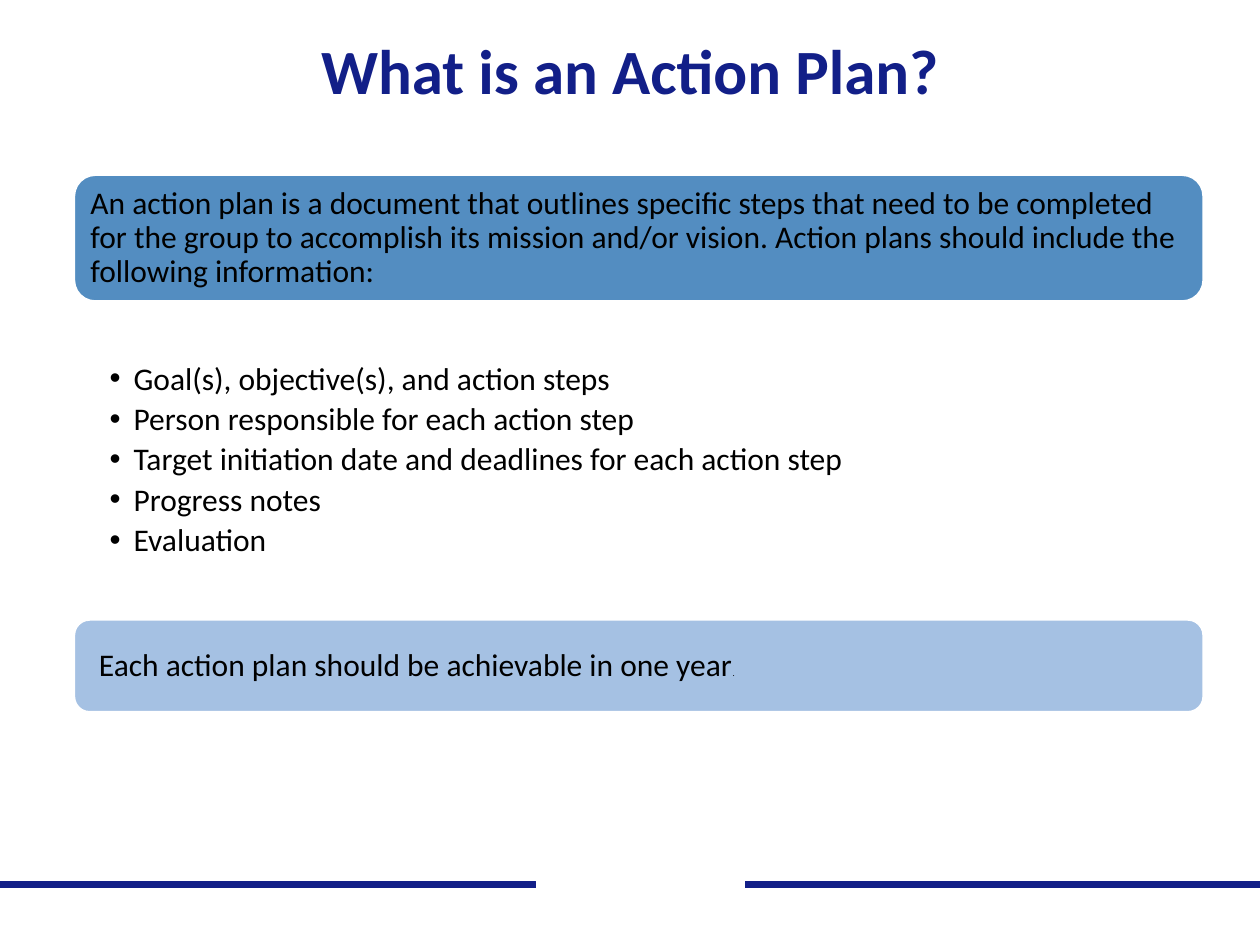
"""Build the slide that explains what an action plan is."""
from pptx import Presentation
from pptx.dml.color import RGBColor
from pptx.enum.shapes import MSO_CONNECTOR as Link, MSO_SHAPE as Shape
from pptx.enum.text import MSO_ANCHOR as Anchor, MSO_AUTO_SIZE as Fit, PP_ALIGN as Align
from pptx.oxml.ns import qn
from pptx.util import Inches, Pt


def paint(form, hue):
    form.solid()
    form.fore_color.rgb = RGBColor.from_string(hue)


def style(para, size, hue="000000", bold=False, align=Align.LEFT):
    para.alignment = align
    para.line_spacing = 0.9
    para.space_before = Pt(0)
    para.font.name = "Calibri"
    para.font.size = Pt(size)
    para.font.bold = bold
    paint(para.font.fill, hue)


NAVY, WHITE = "121F88", "FFFFFF"
LEFT, WIDTH = Inches(0.59), Inches(8.96)

deck = Presentation()
deck.slide_width, deck.slide_height = Inches(10), Inches(7.5)
slide = deck.slides.add_slide(deck.slide_layouts[1])
title, body = slide.placeholders

for start, end, hue in ((0, 10, NAVY), (4.25, 5.91, WHITE)):
    rule = slide.shapes.add_connector(
        Link.STRAIGHT, Inches(start), Inches(7.02), Inches(end), Inches(7.02))
    rule.line.width = Pt(4.5)
    paint(rule.line.fill, hue)
    props = rule._element.spPr
    props.append(props.makeelement(qn("a:effectLst"), {}))

title.left, title.top = Inches(1.35), Inches(0.32)
title.width, title.height = Inches(7.3), Inches(0.53)
frame = title.text_frame
frame.text = "What is an Action Plan?"
frame.auto_size = Fit.NONE
frame.vertical_anchor = Anchor.MIDDLE
style(frame.paragraphs[0], 36, NAVY, True, Align.CENTER)

intro = ("An action plan is a document that outlines specific steps that need to be "
         "completed for the group to accomplish its mission and/or vision. Action plans "
         "should include the following information:")
note = "Each action plan should be achievable in one year"
panels = (
    (1.39, 1, "538DC1", 0.08, 0.07, ((intro, 18),)),
    (4.92, 0.73, "A5C1E3", 0.16, 0.02, ((note, 18), (".", 5))),
)
for top, height, hue, indent, inset, parts in panels:
    panel = slide.shapes.add_shape(
        Shape.ROUNDED_RECTANGLE, LEFT, Inches(top), WIDTH, Inches(height))
    panel.shadow.inherit = False
    paint(panel.fill, hue)
    panel.line.width = Pt(1)
    paint(panel.line.fill, WHITE)
    frame = panel.text_frame
    frame.word_wrap = True
    frame.vertical_anchor = Anchor.MIDDLE
    frame.margin_left = Inches(indent)
    frame.margin_right = frame.margin_top = frame.margin_bottom = Inches(inset)
    para = frame.paragraphs[0]
    style(para, 18)
    for text, size in parts:
        run = para.add_run()
        run.text = text
        run.font.size = Pt(size)

items = (
    "Goal(s), objective(s), and action steps",
    "Person responsible for each action step",
    "Target initiation date and deadlines for each action step",
    "Progress notes",
    "Evaluation",
)
body.left, body.top, body.width, body.height = LEFT, Inches(2.85), WIDTH, Inches(1.7)
frame = body.text_frame
frame.text = "\n".join(items)
frame.auto_size = Fit.NONE
frame.margin_left, frame.margin_right = Inches(0.28), Inches(0.14)
frame.margin_top = frame.margin_bottom = Inches(0.03)
for para in frame.paragraphs:
    props = para._p.get_or_add_pPr()
    props.set("marL", str(Inches(0.19)))
    props.set("indent", str(-Inches(0.19)))
    style(para, 18)
    para.space_after = Pt(3.6)

deck.save("out.pptx")
